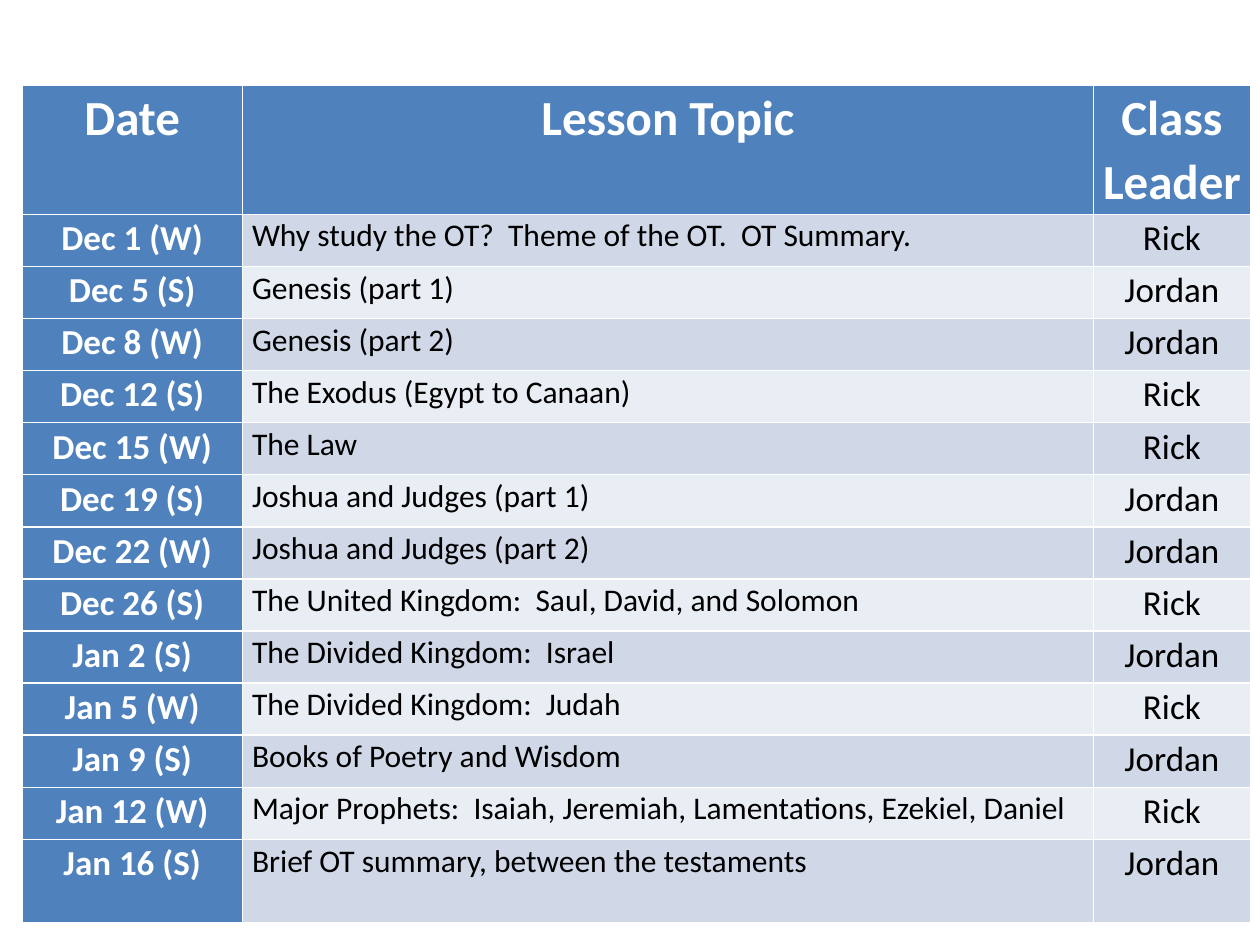
from pptx import Presentation
from pptx.dml.color import RGBColor
from pptx.enum.text import PP_ALIGN
from pptx.util import Cm, Pt


def rgb(value):
    return RGBColor.from_string(value)


BLUE, WHITE, BLACK = "4F81BD", "FFFFFF", "000000"
BANDS = ["E9EDF4", "D0D8E8"]

rows = [
    ("Date", "Lesson Topic", "Class Leader"),
    ("Dec 1 (W)", "Why study the OT?  Theme of the OT.  OT Summary.", "Rick"),
    ("Dec 5 (S)", "Genesis (part 1)", "Jordan"),
    ("Dec 8 (W)", "Genesis (part 2)", "Jordan"),
    ("Dec 12 (S)", "The Exodus (Egypt to Canaan)", "Rick"),
    ("Dec 15 (W)", "The Law", "Rick"),
    ("Dec 19 (S)", "Joshua and Judges (part 1)", "Jordan"),
    ("Dec 22 (W)", "Joshua and Judges (part 2)", "Jordan"),
    ("Dec 26 (S)", "The United Kingdom:  Saul, David, and Solomon", "Rick"),
    ("Jan 2 (S)", "The Divided Kingdom:  Israel", "Jordan"),
    ("Jan 5 (W)", "The Divided Kingdom:  Judah", "Rick"),
    ("Jan 9 (S)", "Books of Poetry and Wisdom", "Jordan"),
    ("Jan 12 (W)", "Major Prophets:  Isaiah, Jeremiah, Lamentations, Ezekiel, Daniel", "Rick"),
    ("Jan 16 (S)", "Brief OT summary, between the testaments", "Jordan"),
]

prs = Presentation()
prs.slide_width, prs.slide_height = Cm(25.4), Cm(19.05)
s = prs.slides.add_slide(prs.slide_layouts[6])

# Table grid; the default table style draws the white rules
table = s.shapes.add_table(len(rows), 3, Cm(0.44), Cm(1.71), Cm(24.77), Cm(16.93)).table
table.first_col = True
for col, width in zip(table.columns, [4.45, 17.15, 3.17]):
    col.width = Cm(width)
heights = [2.61] + [1.05] * (len(rows) - 2) + [1.68]
for row, height in zip(table.rows, heights):
    row.height = Cm(height)

# Cell text and fills
for i, row in enumerate(rows):
    for j, text in enumerate(row):
        cell = table.cell(i, j)
        cell.margin_left = cell.margin_right = Cm(0.19)
        cell.margin_top = cell.margin_bottom = 0
        heading = i == 0 or j == 0
        cell.fill.solid()
        cell.fill.fore_color.rgb = rgb(BLUE if heading else BANDS[i % 2])

        p = cell.text_frame.paragraphs[0]
        p.text = text
        p.line_spacing = 1.07
        p.alignment = PP_ALIGN.LEFT if i and j == 1 else PP_ALIGN.CENTER
        font = p.runs[0].font
        font.name = "Calibri"
        font.size = Pt(28 if i == 0 else 18 if j == 1 else 20)
        font.bold = heading
        font.color.rgb = rgb(WHITE if heading else BLACK)

prs.save("out.pptx")
